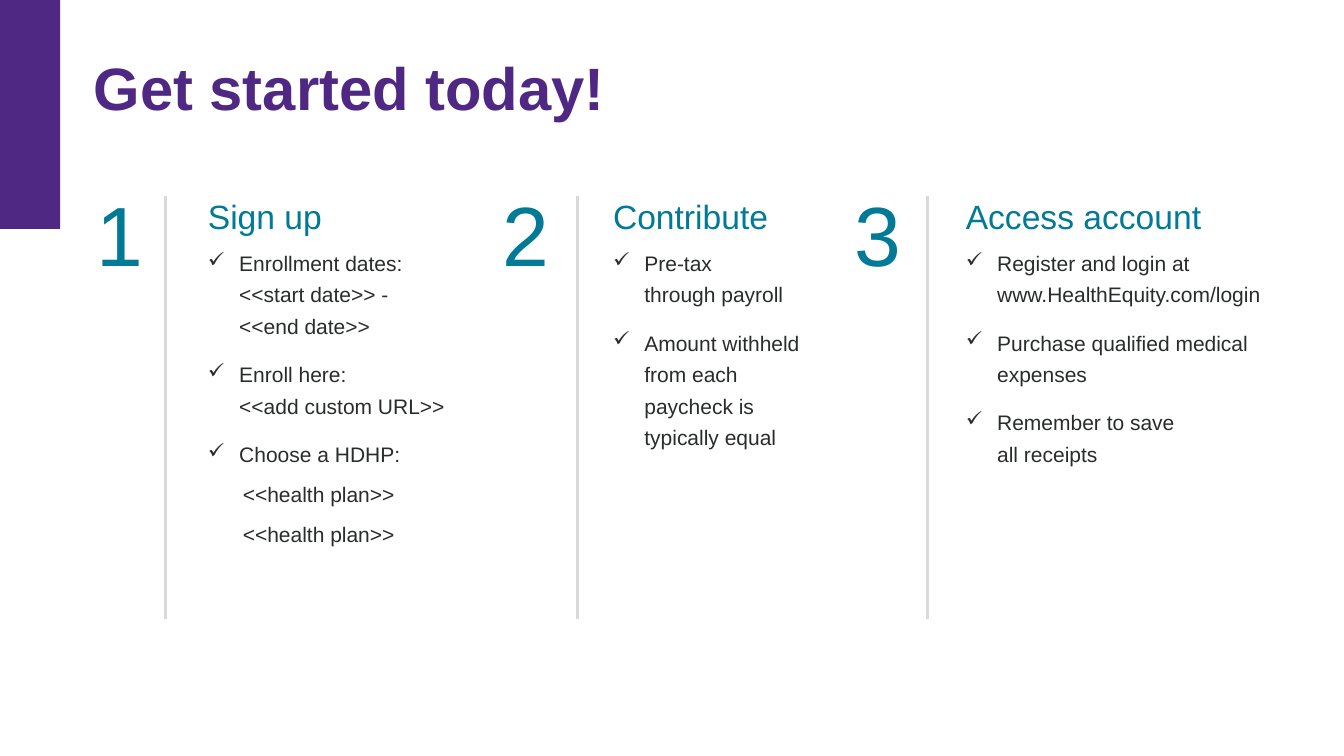
from lxml.etree import SubElement
from pptx import Presentation
from pptx.dml.color import RGBColor
from pptx.enum.shapes import MSO_CONNECTOR, MSO_SHAPE
from pptx.enum.text import MSO_ANCHOR, MSO_AUTO_SIZE, PP_ALIGN
from pptx.oxml.ns import qn
from pptx.util import Cm, Pt

COLORS = {"purple": "4F2883", "teal": "007A96", "text": "2A2C2C", "divider": "D9D9D9"}
FONT = "Arial"
TITLE = "Get started today!"

# Lengths in cm; a vertical tab in the text is a line break.
STEPS = [
    {
        "heading": "Sign up", "left": 1.8, "divider": 4.17, "width": 6.65,
        "checks": [
            "Enrollment dates: <<start date>> -\v<<end date>>",
            "Enroll here:\v<<add custom URL>>",
            "Choose a HDHP:",
        ],
        "plans": ["<<health plan>>", "<<health plan>>"],
    },
    {
        "heading": "Contribute", "left": 12.01, "divider": 14.55, "width": 5.74,
        "checks": [
            "Pre-tax\vthrough payroll",
            "Amount withheld from each paycheck is typically equal",
        ],
        "plans": [],
    },
    {
        "heading": "Access account", "left": 20.9, "divider": 23.37, "width": 7.98,
        "checks": [
            "Register and login at www.HealthEquity.com/login",
            "Purchase qualified medical expenses",
            "Remember to save\vall receipts",
        ],
        "plans": [],
    },
]
NUMBER_TOP, NUMBER_WIDTH, NUMBER_HEIGHT = 4.27, 2.46, 0.94
BODY_OFFSET, BODY_TOP, BODY_HEIGHT = 3.19, 4.65, 8.94
DIVIDER_TOP, DIVIDER_BOTTOM = 4.93, 15.6
CHECK_INDENT, PLAN_INDENT = 0.79, 0.88


def write_text(frame, text, size, color, bold=False, align=PP_ALIGN.LEFT,
               spacing=1.0, after=0, indent=0, bullet=None):
    """Fill the frame's empty first paragraph, or add a paragraph after it."""
    paragraph = frame.paragraphs[0] if not frame.text else frame.add_paragraph()
    paragraph.text = text
    properties = paragraph._p.get_or_add_pPr()
    properties.set("marL", str(Cm(indent)))
    properties.set("indent", str(-Cm(indent) if bullet else 0))
    paragraph.alignment = align
    paragraph.line_spacing = spacing
    paragraph.space_before = Pt(0)
    paragraph.space_after = Pt(after)
    if bullet:
        SubElement(properties, qn("a:buChar")).set("char", bullet)
    for run in paragraph.runs:
        run.font.name = FONT
        run.font.size = Pt(size)
        run.font.bold = bold
        run.font.color.rgb = RGBColor.from_string(COLORS[color])


def add_text_frame(shapes, left, top, width, height):
    frame = shapes.add_textbox(Cm(left), Cm(top), Cm(width), Cm(height)).text_frame
    frame.word_wrap = True
    return frame


def add_title(slide):
    title = slide.shapes.title
    title.left, title.top, title.width, title.height = Cm(2.36), Cm(1.02), Cm(30.1), Cm(1.85)
    frame = title.text_frame
    frame.margin_left = frame.margin_top = frame.margin_right = frame.margin_bottom = 0
    frame.vertical_anchor = MSO_ANCHOR.TOP
    frame.auto_size = MSO_AUTO_SIZE.SHAPE_TO_FIT_TEXT
    write_text(frame, TITLE, 42.7, "purple", bold=True, spacing=1.15)


def add_accent_bar(slide):
    bar = slide.shapes.add_shape(MSO_SHAPE.RECTANGLE, 0, 0, Cm(1.52), Cm(5.77))
    bar.shadow.inherit = False
    bar.fill.solid()
    bar.fill.fore_color.rgb = RGBColor.from_string(COLORS["purple"])
    bar.line.fill.background()


def add_divider(shapes, x):
    divider = shapes.add_connector(
        MSO_CONNECTOR.STRAIGHT, Cm(x), Cm(DIVIDER_TOP), Cm(x), Cm(DIVIDER_BOTTOM))
    divider.line.color.rgb = RGBColor.from_string(COLORS["divider"])
    divider.line.width = Pt(2)
    SubElement(divider._element.spPr, qn("a:effectLst"))


def add_step(slide, number, step):
    shapes = slide.shapes.add_group_shape().shapes
    digit = add_text_frame(shapes, step["left"], NUMBER_TOP, NUMBER_WIDTH, NUMBER_HEIGHT)
    digit.margin_top = Cm(0.32)
    write_text(digit, str(number), 60, "teal", align=PP_ALIGN.CENTER)

    body = add_text_frame(
        shapes, step["left"] + BODY_OFFSET, BODY_TOP, step["width"], BODY_HEIGHT)
    write_text(body, step["heading"], 24, "teal", spacing=1.15, after=6)
    for index, check in enumerate(step["checks"], 1):
        leads_to_plans = step["plans"] and index == len(step["checks"])
        write_text(body, check, 15, "text", spacing=1.25,
                   after=6 if leads_to_plans else 12, indent=CHECK_INDENT, bullet="✓")
    for plan in step["plans"]:
        write_text(body, plan, 15, "text", spacing=1.25, after=6, indent=PLAN_INDENT)

    add_divider(shapes, step["divider"])


def main():
    presentation = Presentation()
    presentation.slide_width, presentation.slide_height = Cm(33.87), Cm(19.05)
    slide = presentation.slides.add_slide(presentation.slide_layouts[5])
    add_accent_bar(slide)
    add_title(slide)
    for number, step in enumerate(STEPS, 1):
        add_step(slide, number, step)
    presentation.save("out.pptx")


if __name__ == "__main__":
    main()
